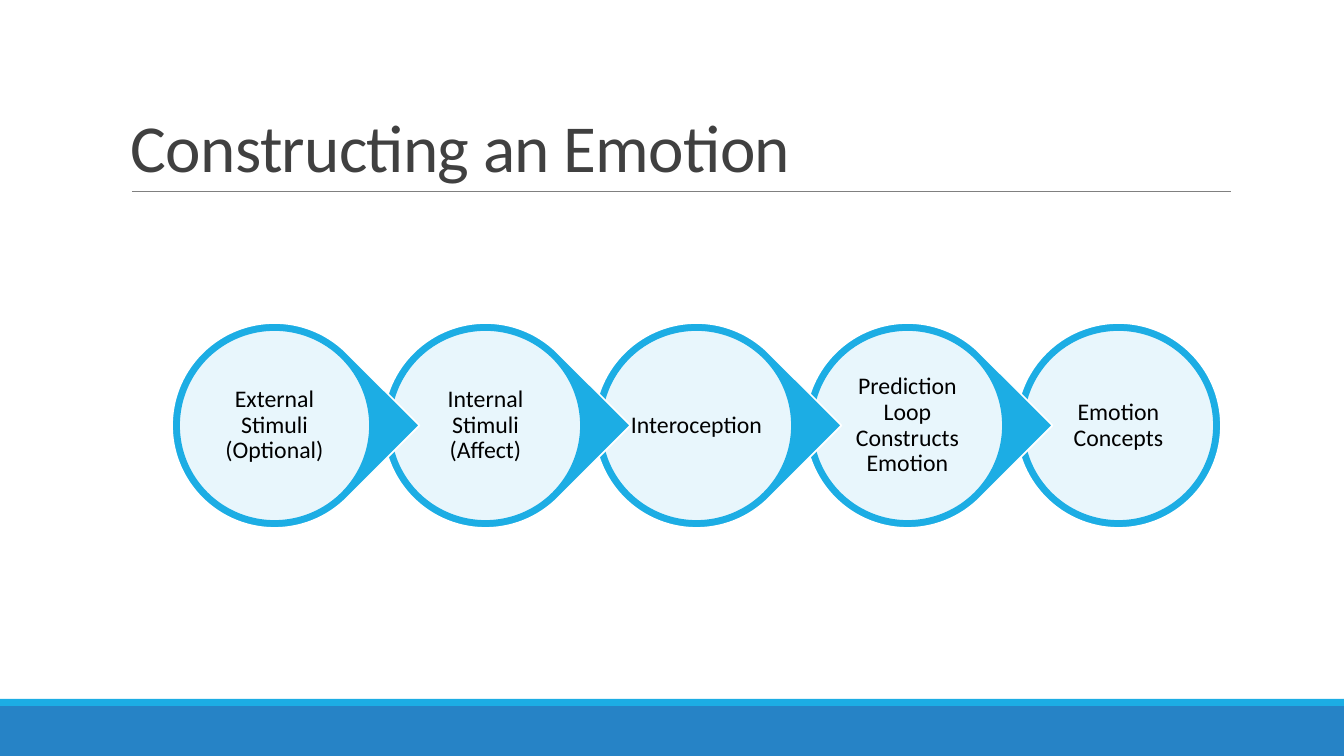
from lxml.etree import SubElement
from pptx import Presentation
from pptx.dml.color import RGBColor
from pptx.enum.shapes import MSO_CONNECTOR, MSO_SHAPE
from pptx.enum.text import MSO_ANCHOR, PP_ALIGN
from pptx.oxml.ns import qn
from pptx.util import Emu, Pt

TITLE = "Constructing an Emotion"
STAGES = [
    "External Stimuli (Optional)",
    "Internal Stimuli (Affect)",
    "Interoception",
    "Prediction Loop Constructs Emotion",
    "Emotion Concepts",
]

CYAN = RGBColor(0x1C, 0xAD, 0xE4)
BLUE = RGBColor(0x26, 0x83, 0xC6)
WHITE = RGBColor(0xFF, 0xFF, 0xFF)
BLACK = RGBColor(0x00, 0x00, 0x00)
CHARCOAL = RGBColor(0x40, 0x40, 0x40)
GRAY = RGBColor(0x80, 0x80, 0x80)
FONT = "Calibri"

WIDTH, HEIGHT = 1344, 756
FOOTER_TOP, STRIP_HEIGHT = 706, 7
RULE_LEFT, RULE_RIGHT, RULE_Y = 132, 1231, 191
DISC_LEFT, DISC_TOP, DISC_SIZE, DISC_PITCH = 172, 323, 205, 211
FACE_INSET, LABEL_INSET = 7, 34


def px(length):
    return Emu(round(length * 914400 / 100.8))


def add_filled(shapes, kind, bounds, fill, line=None):
    shape = shapes.add_shape(kind, *map(px, bounds))
    shape.shadow.inherit = False
    shape.fill.solid()
    shape.fill.fore_color.rgb = fill
    if line is None:
        shape.line.fill.background()
    else:
        shape.line.color.rgb = line
        shape.line.width = Pt(1.25)
    return shape


def add_text(shapes, text, bounds, size, color, anchor, spacing):
    box = shapes.add_textbox(*map(px, bounds))
    frame = box.text_frame
    frame.word_wrap = True
    frame.vertical_anchor = anchor
    frame.text = text
    para = frame.paragraphs[0]
    para.line_spacing = spacing
    font = para.runs[0].font
    font.name, font.size, font.color.rgb = FONT, Pt(size), color
    return frame


def inset_square(left, inset):
    """Bounds of a square centred in the disc that starts at left."""
    side = DISC_SIZE - 2 * inset
    return left + inset, DISC_TOP + inset, side, side


def add_stage(shapes, text, left, is_last):
    kind = MSO_SHAPE.OVAL if is_last else MSO_SHAPE.TEAR
    disc = add_filled(shapes, kind, inset_square(left, 0), CYAN, WHITE)
    if not is_last:
        disc.rotation = 45

    face = add_filled(shapes, MSO_SHAPE.OVAL, inset_square(left, FACE_INSET), WHITE, CYAN)
    face_color = face.element.xpath("./p:spPr/a:solidFill/a:srgbClr")[0]
    SubElement(face_color, qn("a:alpha"), val="90000")

    frame = add_text(shapes, text, inset_square(left, LABEL_INSET), 17, BLACK,
                     MSO_ANCHOR.MIDDLE, 0.9)
    frame.margin_left = frame.margin_right = px(2)
    frame.margin_top = frame.margin_bottom = px(2)
    para = frame.paragraphs[0]
    para.alignment = PP_ALIGN.CENTER
    para.space_after = Pt(6)


def add_frame(shapes):
    """Footer bands, title and the rule below it."""
    add_filled(shapes, MSO_SHAPE.RECTANGLE,
               (0, FOOTER_TOP, WIDTH, HEIGHT - FOOTER_TOP), BLUE)
    add_filled(shapes, MSO_SHAPE.RECTANGLE,
               (0, FOOTER_TOP - STRIP_HEIGHT, WIDTH, STRIP_HEIGHT), CYAN)
    rule = shapes.add_connector(MSO_CONNECTOR.STRAIGHT, px(RULE_LEFT), px(RULE_Y),
                                px(RULE_RIGHT), px(RULE_Y))
    rule.line.color.rgb = GRAY
    rule.line.width = Pt(0.5)
    SubElement(rule.element.spPr, qn("a:effectLst"))
    title = add_text(shapes, TITLE, (121, 31, 1109, 160), 48, CHARCOAL,
                     MSO_ANCHOR.BOTTOM, 0.85)
    title.paragraphs[0].runs[0].font._element.set("spc", "-50")


def main():
    deck = Presentation()
    deck.slide_width, deck.slide_height = px(WIDTH), px(HEIGHT)
    page = deck.slides.add_slide(deck.slide_layouts[6])
    add_frame(page.shapes)
    chain = page.shapes.add_group_shape()
    last = len(STAGES) - 1
    # Later stages go behind, so each point overlaps the next disc.
    for index in range(last, -1, -1):
        add_stage(chain.shapes, STAGES[index], DISC_LEFT + index * DISC_PITCH,
                  index == last)
    deck.save("out.pptx")


if __name__ == "__main__":
    main()
